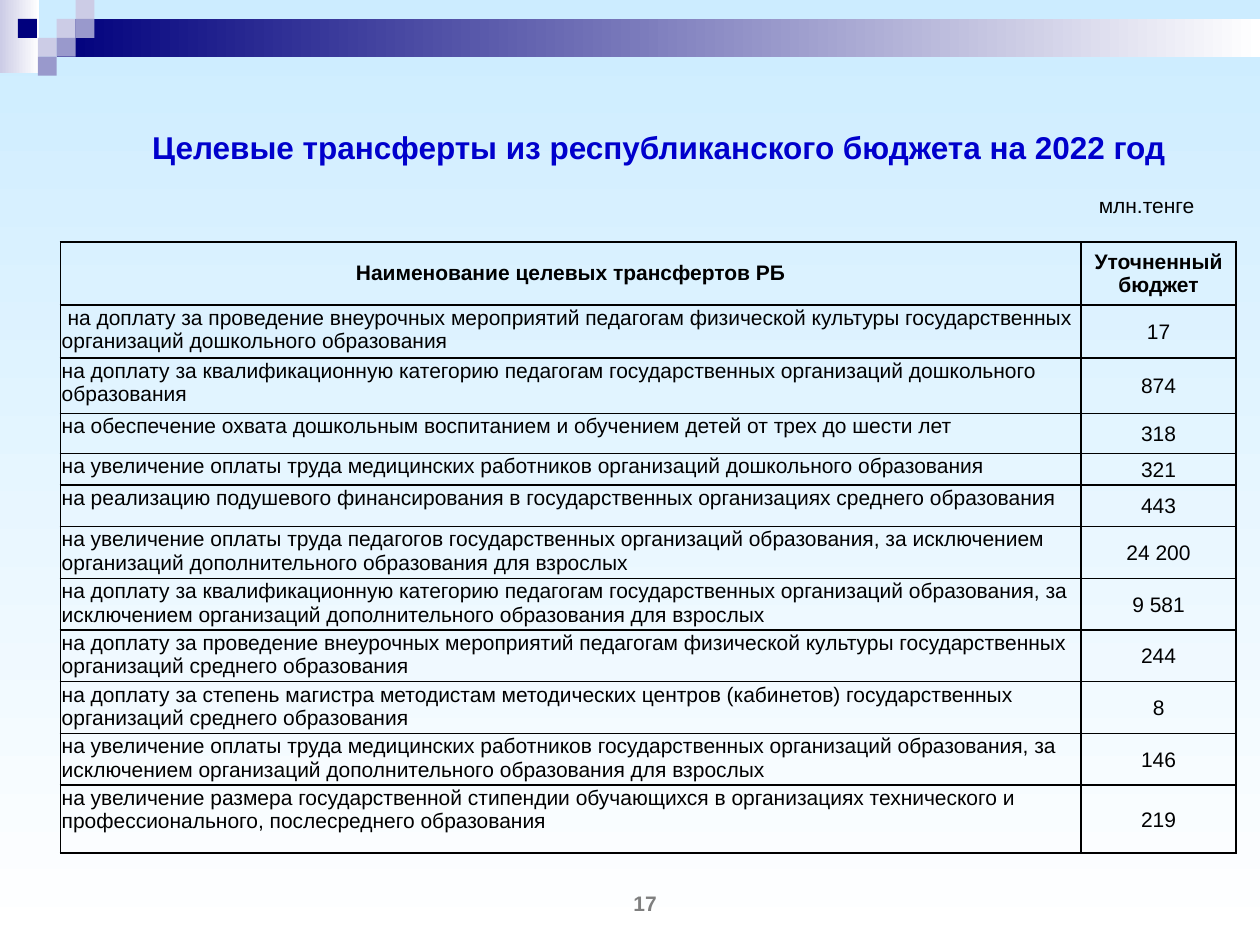
from pptx import Presentation
from pptx.dml.color import RGBColor
from pptx.enum.shapes import MSO_SHAPE
from pptx.enum.text import MSO_ANCHOR, PP_ALIGN
from pptx.oxml import parse_xml
from pptx.oxml.ns import nsdecls
from pptx.util import Inches, Pt

COLORS = {
    "sky": "CCECFF", "white": "FFFFFF", "navy": "00007D", "lilac": "CCCCE6",
    "violet": "9999CC", "title": "0000CC", "black": "000000", "gray": "7F7F7F",
}
FONT = "Arial"
HEADER = ("Наименование целевых трансфертов РБ", "Уточненный бюджет")
# Name, value, row height
TRANSFERS = [
    (" на доплату за проведение внеурочных мероприятий педагогам физической культуры "
     "государственных организаций дошкольного образования", "17", 0.42),
    ("на доплату за квалификационную категорию педагогам государственных организаций "
     "дошкольного образования", "874", 0.44),
    ("на обеспечение охвата дошкольным воспитанием и обучением детей от трех до шести лет",
     "318", 0.32),
    ("на увеличение оплаты труда медицинских работников организаций дошкольного образования",
     "321", 0.25),
    ("на реализацию подушевого финансирования в государственных организациях среднего "
     "образования", "443", 0.33),
    ("на увеличение оплаты труда педагогов государственных организаций образования, за "
     "исключением организаций дополнительного образования для взрослых", "24 200", 0.41),
    ("на доплату за квалификационную категорию педагогам государственных организаций "
     "образования, за исключением организаций дополнительного образования для взрослых",
     "9 581", 0.4),
    ("на доплату за проведение внеурочных мероприятий педагогам физической культуры "
     "государственных организаций среднего образования", "244", 0.41),
    ("на доплату за степень магистра методистам методических центров (кабинетов) "
     "государственных организаций среднего образования", "8", 0.4),
    ("на увеличение оплаты труда медицинских работников государственных организаций "
     "образования, за исключением организаций дополнительного образования для взрослых",
     "146", 0.4),
    ("на увеличение размера государственной стипендии обучающихся в организациях "
     "технического и профессионального, послесреднего образования", "219", 0.54),
]


def rgb(name):
    return RGBColor.from_string(COLORS[name])


def fill_gradient(fill, start, end, angle=0):
    fill.gradient()
    fill.gradient_angle = angle
    for stop, name, position in zip(fill.gradient_stops, (start, end), (0, 1)):
        stop.color.rgb = rgb(name)
        stop.position = position


def style_text(p, size, color, bold=False, align=PP_ALIGN.CENTER):
    p.alignment = align
    p.font.name = FONT
    p.font.size = Pt(size)
    p.font.bold = bold
    p.font.color.rgb = rgb(color)


def add_label(s, text, left, top, width, height, size, color, bold=False):
    tf = s.shapes.add_textbox(Inches(left), Inches(top), Inches(width), Inches(height)).text_frame
    tf.word_wrap = True
    tf.vertical_anchor = MSO_ANCHOR.MIDDLE
    tf.margin_top = tf.margin_bottom = 0
    tf.text = text
    style_text(tf.paragraphs[0], size, color, bold)


def add_block(s, left, top, width, height, color, fade_to=None):
    sp = s.shapes.add_shape(MSO_SHAPE.RECTANGLE, Inches(left), Inches(top),
                            Inches(width), Inches(height))
    sp.shadow.inherit = False
    sp.line.fill.background()
    if fade_to:
        fill_gradient(sp.fill, color, fade_to)
    else:
        sp.fill.solid()
        sp.fill.fore_color.rgb = rgb(color)


def add_banner(s, left, top, width):
    """Fading bars with a checker of small squares at the left end."""
    unit = 0.15
    add_block(s, left, top, 0.31, 0.58, "lilac", "white")
    add_block(s, left + 3 * unit, top + unit, width - 3 * unit, 2 * unit, "navy", "white")
    squares = [(3, 1, "lilac"), (4, 0, "lilac"), (4, 1, "violet"), (2, 2, "lilac"),
               (0.95, 1, "navy"), (3, 2, "violet"), (2, 3, "violet")]
    for col, row, color in squares:
        add_block(s, left + col * unit, top + row * unit, unit, unit, color)


def set_borders(cell):
    tc_pr = cell._tc.get_or_add_tcPr()
    for i, side in enumerate("LRTB"):
        tc_pr.insert(i, parse_xml(
            f'<a:ln{side} {nsdecls("a")} w="12700"><a:solidFill>'
            f'<a:srgbClr val="{COLORS["black"]}"/></a:solidFill></a:ln{side}>'))


def fill_cell(cell, text, margins, bold, align, anchor):
    cell.fill.background()
    set_borders(cell)
    cell.margin_left, cell.margin_top, cell.margin_right, cell.margin_bottom = map(Inches, margins)
    cell.vertical_anchor = anchor
    cell.text = text
    style_text(cell.text_frame.paragraphs[0], 12, "black", bold, align)


def add_transfer_table(s, left, top, width):
    heights = [0.48] + [height for _, _, height in TRANSFERS]
    value_width = 1.23
    table = s.shapes.add_table(len(heights), 2, Inches(left), Inches(top),
                               Inches(width), Inches(sum(heights))).table
    table.first_row = table.horz_banding = False
    table.columns[0].width = Inches(width - value_width)
    table.columns[1].width = Inches(value_width)
    for row, height in zip(table.rows, heights):
        row.height = Inches(height)

    # Header row
    for c, text in enumerate(HEADER):
        cell = table.cell(0, c)
        fill_cell(cell, text, (0.1, 0.05, 0.1, 0.05), True, PP_ALIGN.CENTER, MSO_ANCHOR.MIDDLE)
        cell.text_frame.paragraphs[0].space_before = Pt(2.4)

    # Names at the top left, values in the centre
    margins = (0.01, 0.01, 0.01, 0)
    for r, (name, value, _) in enumerate(TRANSFERS, 1):
        fill_cell(table.cell(r, 0), name, margins, False, PP_ALIGN.LEFT, MSO_ANCHOR.TOP)
        fill_cell(table.cell(r, 1), value, margins, False, PP_ALIGN.CENTER, MSO_ANCHOR.MIDDLE)


def main():
    prs = Presentation()
    prs.slide_width, prs.slide_height = Inches(10), Inches(7.5)
    s = prs.slides.add_slide(prs.slide_layouts[6])
    fill_gradient(s.background.fill, "sky", "white", 270)

    add_banner(s, 0, 0, 10)
    add_label(s, "Целевые трансферты из республиканского бюджета на 2022 год",
              0.46, 1, 9.54, 0.33, 18, "title", True)
    add_transfer_table(s, 0.48, 1.92, 9.33)
    add_label(s, "млн.тенге", 8.41, 1.52, 1.38, 0.22, 12, "black")
    add_label(s, "17", 4.12, 7.08, 2, 0.17, 12, "gray", True)
    prs.save("out.pptx")


if __name__ == "__main__":
    main()
